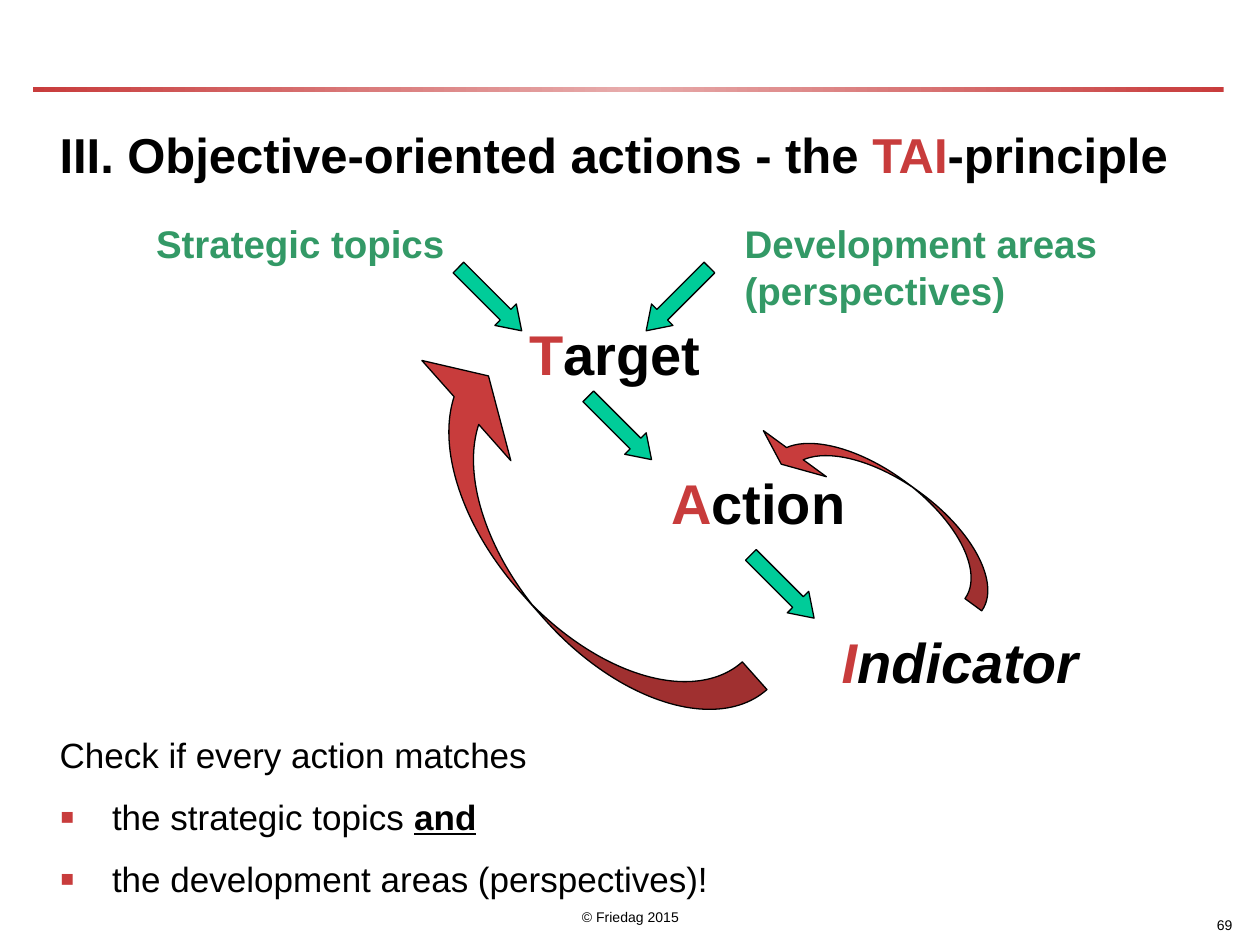
import copy

import pptx
import pptx.dml.color
import pptx.enum.shapes
import pptx.enum.text
import pptx.oxml
import pptx.oxml.ns
import pptx.util

Pt = pptx.util.Pt
SHAPES = pptx.enum.shapes.MSO_SHAPE
ALIGN = pptx.enum.text.PP_ALIGN
ANCHOR = pptx.enum.text.MSO_ANCHOR

COLORS = {
    "black": "000000",
    "red": "C83C3C",
    "pale red": "E7ABAB",
    "label green": "339966",
    "arrow green": "00CC99",
}
NARROW = (3, 3.6, 3, 3.6)
WIDE = (7.2, 3.6, 7.2, 3.6)
FOOTER = (7.2, 0, 7.2, 3)


def rgb(name):
    return pptx.dml.color.RGBColor.from_string(COLORS[name])


class SlideBuilder:
    font_name = "Arial"

    def __init__(self, slide):
        self.slide = slide

    def place(self, shape, box):
        shape.left, shape.top, shape.width, shape.height = (Pt(value) for value in box)

    def frame(self, shape, insets, anchor=ANCHOR.TOP):
        frame = shape.text_frame
        frame.word_wrap = True
        frame.auto_size = pptx.enum.text.MSO_AUTO_SIZE.NONE
        frame.vertical_anchor = anchor
        frame.margin_left, frame.margin_top, frame.margin_right, frame.margin_bottom = (
            Pt(value) for value in insets
        )
        return frame

    def add_runs(self, paragraph, pieces, size, bold=False, italic=False, align=ALIGN.LEFT):
        paragraph.alignment = align
        for text, color in pieces:
            run = paragraph.add_run()
            run.text = text
            run.font.name = self.font_name
            run.font.size = Pt(size)
            run.font.bold = bold
            run.font.italic = italic
            run.font.color.rgb = rgb(color)

    def title(self, box, pieces):
        shape = self.slide.shapes.title
        self.place(shape, box)
        self.add_runs(self.frame(shape, NARROW).paragraphs[0], pieces, 28, bold=True)

    def text(self, box, pieces, size, insets=WIDE, anchor=ANCHOR.TOP, **style):
        shape = self.slide.shapes.add_textbox(*(Pt(value) for value in box))
        self.add_runs(self.frame(shape, insets, anchor).paragraphs[0], pieces, size, **style)
        return shape

    def bullet(self, frame, text):
        paragraph = frame.add_paragraph()
        paragraph.space_before = Pt(11.5)
        properties = paragraph._p.get_or_add_pPr()
        properties.set("marL", str(Pt(30)))
        properties.set("indent", str(-Pt(30)))
        namespace = pptx.oxml.ns.nsdecls("a")
        for element in (
            f'<a:buClr {namespace}><a:srgbClr val="{COLORS["red"]}"/></a:buClr>',
            f'<a:buSzPct {namespace} val="125000"/>',
            f'<a:buFont {namespace} typeface="{self.font_name}"/>',
            f'<a:buChar {namespace} char="▪"/>',
        ):
            properties.append(pptx.oxml.parse_xml(element))
        self.add_runs(paragraph, [(text, "black")], 20)
        return paragraph

    def arrow(self, kind, box, rotation, adjustments, color):
        shape = self.slide.shapes.add_shape(kind, *(Pt(value) for value in box))
        shape.shadow.inherit = False
        shape.rotation = rotation
        for index, value in enumerate(adjustments):
            shape.adjustments[index] = value
        shape.fill.solid()
        shape.fill.fore_color.rgb = rgb(color)
        shape.line.color.rgb = rgb("black")
        shape.line.width = Pt(0.75)

    def gradient_rule(self, box):
        shape = self.slide.shapes.add_shape(SHAPES.RECTANGLE, *(Pt(value) for value in box))
        shape.shadow.inherit = False
        shape.line.fill.background()
        shape.fill.gradient()
        shape.fill.gradient_angle = 0
        stop_list = shape._element.spPr.find(".//" + pptx.oxml.ns.qn("a:gsLst"))
        stop_list.insert(1, copy.deepcopy(stop_list[0]))
        stops = zip(shape.fill.gradient_stops, (0, 0.5, 1), ("red", "pale red", "red"))
        for stop, position, color in stops:
            stop.position = position
            stop.color.rgb = rgb(color)


def main():
    presentation = pptx.Presentation()
    presentation.slide_width = Pt(720)
    presentation.slide_height = Pt(540)
    builder = SlideBuilder(presentation.slides.add_slide(presentation.slide_layouts[5]))

    builder.gradient_rule((18.9, 49.7, 680.4, 2.9))
    builder.title(
        (31, 67.7, 658, 77),
        [
            ("III. Objective-oriented actions - the ", "black"),
            ("TAI", "red"),
            ("-principle", "black"),
        ],
    )

    checklist = builder.text(
        (31, 415.5, 658, 103), [("Check if every action matches", "black")], 20, NARROW
    ).text_frame
    topics = builder.bullet(checklist, "the strategic topics ")
    builder.add_runs(topics, [("and", "black")], 20, bold=True)
    topics.runs[-1].font.underline = True
    builder.bullet(checklist, "the development areas (perspectives)!")

    for box, initial, rest, italic in (
        ((263.5, 179.3, 175.7, 46), "T", "arget", False),
        ((354.2, 264.2, 158.4, 45.4), "A", "ction", False),
        ((469.4, 355, 158.4, 45.4), "I", "ndicator", True),
    ):
        pieces = [(initial, "red"), (rest, "black")]
        builder.text(box, pieces, 32, bold=True, italic=italic, align=ALIGN.CENTER)

    for left, width, label, align in (
        (24.5, 232.5, "Strategic topics", ALIGN.RIGHT),
        (422.6, 255, "Development areas (perspectives)", ALIGN.LEFT),
    ):
        box = (left, 122.4, width, 33.8)
        builder.text(box, [(label, "label green")], 22, NARROW, bold=True, align=align)

    for left, top, rotation in (
        (378.7, 145.4, 45),
        (271.4, 145.4, 315),
        (345.6, 219, 315),
        (438.5, 309.6, 315),
    ):
        box = (left, top, 17.3, 51.1)
        builder.arrow(SHAPES.DOWN_ARROW, box, rotation, (0.5, 0.75), "arrow green")

    builder.arrow(
        SHAPES.CURVED_DOWN_ARROW, (181.4, 278.6, 278, 68.4), 228.4, (0.31, 1.12, 0.33), "red"
    )
    builder.arrow(
        SHAPES.CURVED_UP_ARROW, (422.6, 270, 164.2, 33.8), 216.2, (0.35, 1.32, 0.28), "red"
    )

    for box, text, align in (
        ((246.2, 504, 228.2, 28), "© Friedag 2015", ALIGN.CENTER),
        ((561.6, 508.3, 149.8, 28), "69", ALIGN.RIGHT),
    ):
        builder.text(box, [(text, "black")], 8, FOOTER, ANCHOR.BOTTOM, align=align)

    presentation.save("out.pptx")


if __name__ == "__main__":
    main()
